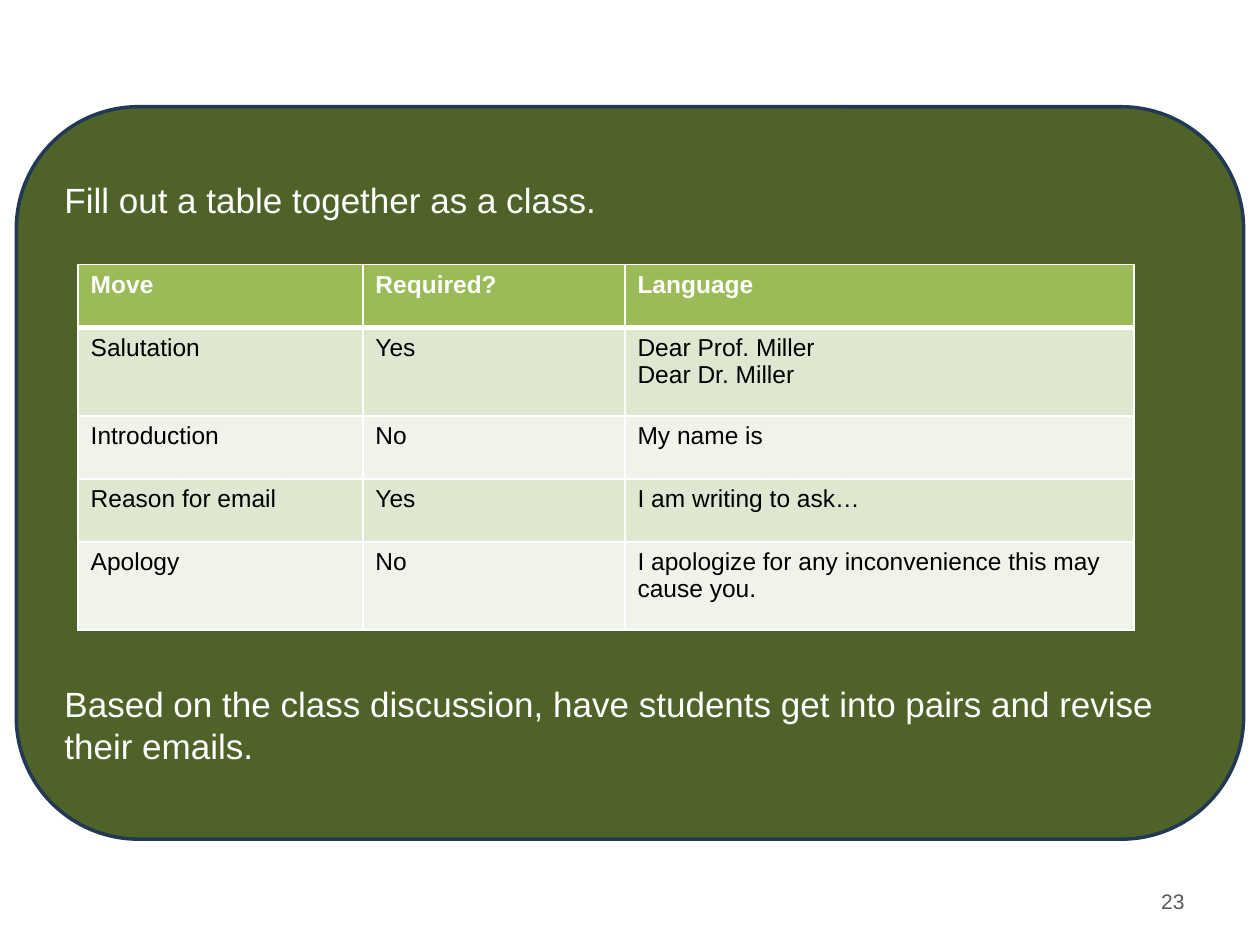
from lxml import etree
from pptx import Presentation
from pptx import util as u
from pptx.dml.color import RGBColor
from pptx.enum import shapes, text
from pptx.oxml.ns import qn

WIDE, HIGH = 10, 7.5
WHITE = "FFFFFF"
COLS = (2.26, 2.08, 4.04)
TALL = (0.5, 0.7, 0.5, 0.5, 0.7)
ROWS = (
    ("Move", "Required?", "Language"),
    ("Salutation", "Yes", "Dear Prof. Miller\nDear Dr. Miller"),
    ("Introduction", "No", "My name is"),
    ("Reason for email", "Yes", "I am writing to ask…"),
    ("Apology", "No", "I apologize for any inconvenience this may cause you."),
)


def hue(code):
    """Turn a hex string into a colour."""
    return RGBColor.from_string(code)


def place(x, y, w, h):
    """Turn shares of the slide into a left, top, width and height."""
    return [u.Inches(part * size) for part, size in zip((x, y, w, h), (WIDE, HIGH) * 2)]


def write(frame, words, size, ink, bold=False, **form):
    """Fill a text frame, one paragraph a line, in one format."""
    frame.word_wrap = True
    frame.text = words
    for para in frame.paragraphs:
        for name, value in {"alignment": text.PP_ALIGN.LEFT, **form}.items():
            setattr(para, name, value)
        for run in para.runs:
            for name, value in {"name": "Arial", "size": u.Pt(size), "bold": bold}.items():
                setattr(run.font, name, value)
            run.font.color.rgb = hue(ink)


def panel(slide):
    """Draw the rounded panel with a line of text above and below the table."""
    box = slide.shapes.add_shape(
        shapes.MSO_SHAPE.ROUNDED_RECTANGLE, *place(0.013, 0.113, 0.974, 0.775))
    box.shadow.inherit = False
    box.fill.solid()
    box.fill.fore_color.rgb = hue("4F6228")
    box.line.color.rgb = hue("233953")
    box.line.width = u.Pt(2)
    frame = box.text_frame
    frame.vertical_anchor = text.MSO_ANCHOR.MIDDLE
    write(frame, "Fill out a table together as a class.\n"
          "Based on the class discussion, have students get into pairs and revise their emails.",
          20, WHITE, line_spacing=u.Pt(24))
    frame.paragraphs[1].space_before = u.Pt(264)


def edge(cell, side, width):
    """Draw one white border of a cell."""
    line = etree.SubElement(cell._tc.get_or_add_tcPr(), qn("a:ln" + side), w=str(u.Pt(width)))
    fill = etree.SubElement(line, qn("a:solidFill"))
    etree.SubElement(fill, qn("a:srgbClr"), val=WHITE)


def table(slide):
    """Build the table of email moves."""
    spot = place(0.062, 0.28, sum(COLS) / WIDE, sum(TALL) / HIGH)
    grid = slide.shapes.add_table(len(ROWS), len(COLS), *spot).table
    grid.horz_banding = False
    for col, width in zip(grid.columns, COLS):
        col.width = u.Inches(width)
    for i, (row, height, words) in enumerate(zip(grid.rows, TALL, ROWS)):
        row.height = u.Inches(height)
        head = i == 0
        shade = "9BBB59" if head else ("EFF3E9", "DEE7D0")[i % 2]
        for cell, word in zip(row.cells, words):
            write(cell.text_frame, word, 14, WHITE if head else "000000", head)
            for side, width in zip("LRTB", (1, 1, 3 if i == 1 else 1, 3 if head else 1)):
                edge(cell, side, width)
            cell.fill.solid()
            cell.fill.fore_color.rgb = hue(shade)


def number(slide):
    """Write the slide number at the lower right."""
    frame = slide.shapes.add_textbox(*place(0.717, 0.927, 0.233, 0.053)).text_frame
    frame.vertical_anchor = text.MSO_ANCHOR.MIDDLE
    write(frame, "23", 12, "595959", alignment=text.PP_ALIGN.RIGHT)


def main():
    """Build and save the slide."""
    deck = Presentation()
    deck.slide_width, deck.slide_height = u.Inches(WIDE), u.Inches(HIGH)
    slide = deck.slides.add_slide(deck.slide_layouts[6])
    for draw in (number, panel, table):
        draw(slide)
    deck.save("out.pptx")


if __name__ == "__main__":
    main()
